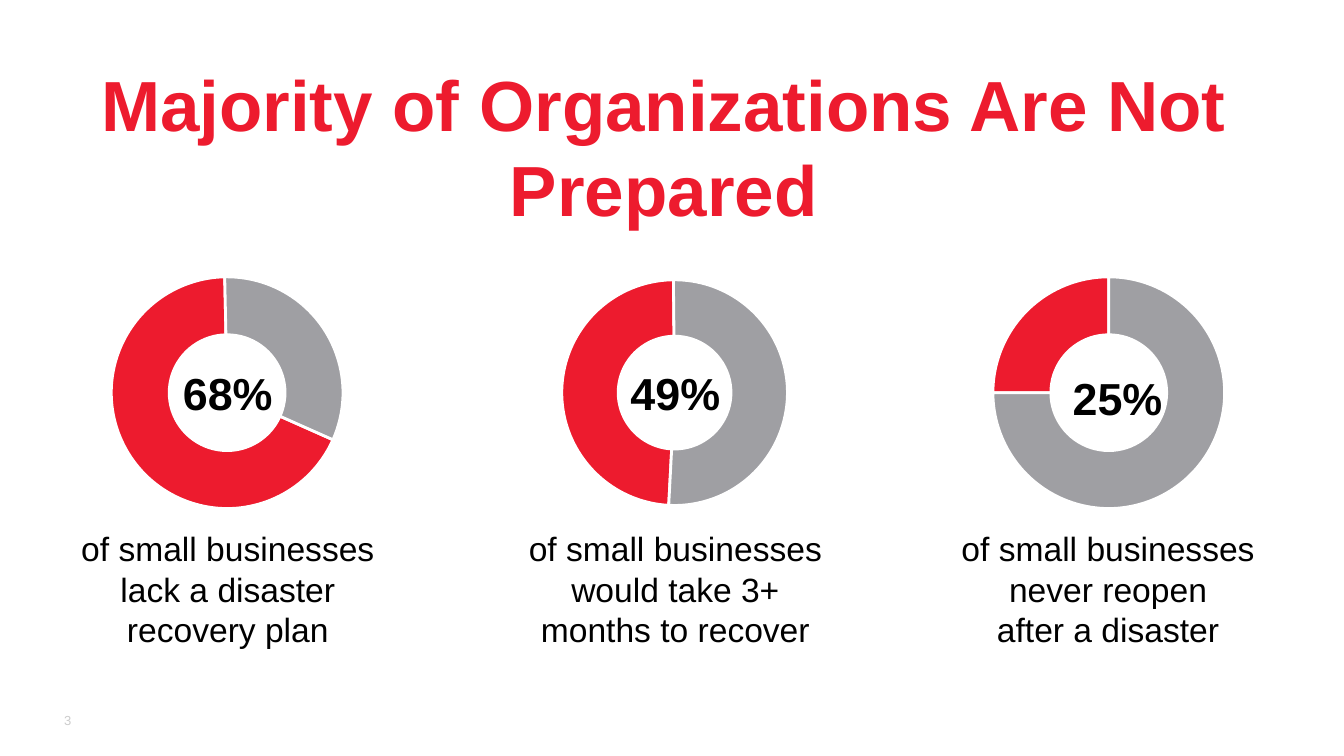
from lxml.etree import SubElement
from pptx import Presentation
from pptx.chart.data import CategoryChartData
from pptx.dml.color import RGBColor
from pptx.enum.chart import XL_CHART_TYPE
from pptx.enum.text import MSO_ANCHOR, PP_ALIGN
from pptx.oxml.ns import qn
from pptx.util import Inches, Pt

RED = RGBColor(0xED, 0x1B, 0x2E)
GREY = RGBColor(0x9F, 0x9F, 0xA3)
PALE = RGBColor(0xCC, 0xCC, 0xCC)
BLACK = RGBColor(0, 0, 0)
WHITE = RGBColor(255, 255, 255)

FORMS = {
    "title": {"size": Pt(38), "bold": True, "color": RED},
    "share": {"size": Pt(24), "bold": True, "color": BLACK},
    "claim": {"size": Pt(18), "bold": False, "color": BLACK},
    "page": {"size": Pt(7), "bold": False, "color": PALE},
    "chart": {"size": Pt(10), "bold": False, "color": BLACK},
}

deck = Presentation()
deck.slide_width = Inches(10)
deck.slide_height = deck.slide_width * 9 // 16
col, row = deck.slide_width / 100, deck.slide_height / 100
slide = deck.slides.add_slide(deck.slide_layouts[6])


def style(font, form):
    font.name = "Arial"
    for key, value in FORMS[form].items():
        if key == "color":
            font.color.rgb = value
        else:
            setattr(font, key, value)


def write(text, form, left, top, wide, high):
    box = slide.shapes.add_textbox(
        int(left * col), int(top * row), int(wide * col), int(high * row))
    frame = box.text_frame
    frame.word_wrap = True
    frame.margin_left = frame.margin_right = 0
    para = frame.paragraphs[0]
    para.text = text
    para.alignment = PP_ALIGN.CENTER
    for run in para.runs:
        style(run.font, form)
    return frame


write("Majority of Organizations Are Not Prepared", "title", 4.4, 7.1, 90, 8)

page = write("3", "page", 3.1, 92.6, 3.2, 5.3)
page.margin_right = Inches(0.1)
page.vertical_anchor = MSO_ANCHOR.MIDDLE
page.paragraphs[0].alignment = PP_ALIGN.RIGHT

INNER = {"layoutTarget": "inner", "xMode": "edge", "yMode": "edge",
         "x": 0.08, "y": 0.12, "w": 0.84, "h": 0.76}
STATS = [
    (68, 114, {}, 6.9, 13.3, 47.5, 5.2, 23.5,
     "of small businesses lack a disaster recovery plan"),
    (49, 183, INNER, 40.2, 46.6, 47.5, 38.5, 23.5,
     "of small businesses would take 3+ months to recover"),
    (25, 270, {}, 72.5, 79.5, 48.2, 71.3, 22.3,
     "of small businesses never reopen\nafter a disaster"),
]

for share, angle, inner, left, mark, top, edge, wide, claim in STATS:
    data = CategoryChartData()
    data.categories = ["1", "2"]
    data.add_series("Series 1", (share, 100 - share))
    chart = slide.shapes.add_chart(
        XL_CHART_TYPE.DOUGHNUT, int(left * col), int(32.2 * row),
        int(20 * col), int(39.5 * row), data).chart
    chart.has_legend = chart.has_title = False
    style(chart.font, "chart")
    plot = chart.plots[0]
    plot.vary_by_categories = True
    plot.has_data_labels = False
    for index, color in enumerate((RED, GREY)):
        part = plot.series[0].points[index].format
        part.fill.solid()
        part.fill.fore_color.rgb = color
        part.line.color.rgb = WHITE
        part.line.width = Pt(1.5)

    root = chart.element
    for tag, value in {"c:firstSliceAng": angle, "c:holeSize": 72}.items():
        root.find(".//" + qn(tag)).set("val", str(value))
    if inner:
        area = root.find(".//" + qn("c:plotArea"))
        for old in area.findall(qn("c:layout")):
            area.remove(old)
        layout = SubElement(area, qn("c:layout"))
        area.insert(0, layout)
        manual = SubElement(layout, qn("c:manualLayout"))
        for tag, value in inner.items():
            SubElement(manual, qn("c:" + tag)).set("val", str(value))

    write(f"{share}%", "share", mark, top, 7.3, 8.9)
    write(claim, "claim", edge, 69, wide, 18)

deck.save("out.pptx")
